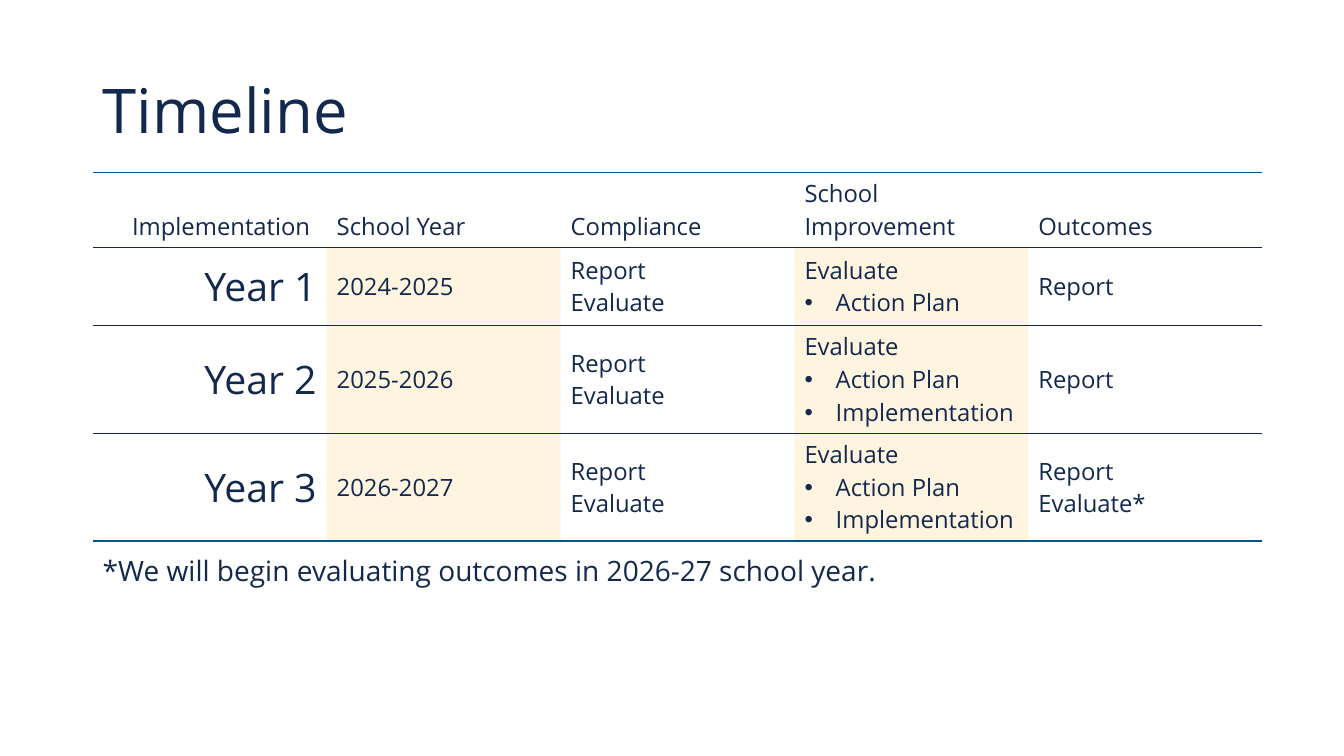
from dataclasses import dataclass

from lxml.etree import SubElement
from pptx import Presentation
from pptx.dml.color import RGBColor
from pptx.enum.text import MSO_ANCHOR as Anchor, MSO_AUTO_SIZE as Fit, PP_ALIGN as Align
from pptx.oxml.ns import qn
from pptx.util import Inches, Pt

COLORS = {"ink": "12284C", "edge": "005587", "gold": "FFC866"}
FONT = "Open Sans"
LEFT, COL, LINE, PAD = 0.92, 2.32, 0.32, 0.1
PLAIN = "{2D5ABB26-0587-4C30-8999-92F81FD0307C}"
BULLET = "• "
HEADS = ("Implementation ", "School Year", "Compliance", "School Improvement", "Outcomes")
TINTED = (1, 3)


@dataclass
class Year:
    name: str
    span: str
    plan: tuple[str, ...]
    result: tuple[str, ...]
    lines: float

    def cells(self) -> list[tuple[str, ...]]:
        return [(self.name,), (self.span,), ("Report", "Evaluate"),
                ("Evaluate", *(BULLET + step for step in self.plan)), self.result]


YEARS = (
    Year("Year 1", "2024-2025", ("Action Plan",), ("Report",), 2.1),
    Year("Year 2", "2025-2026", ("Action Plan", "Implementation"), ("Report",), 3),
    Year("Year 3", "2026-2027", ("Action Plan", "Implementation"), ("Report", "Evaluate*"), 3),
)


def grid(col: float, row: float, cols: float, rows: float) -> tuple:
    """Turn a place in columns and text lines into lengths."""
    return (Inches(LEFT + COL * col), Inches(LINE * row),
            Inches(COL * cols), Inches(LINE * rows))


def style(para, size: float, align=Align.LEFT) -> None:
    para.alignment = align
    para.font.name, para.font.size = FONT, Pt(size)
    para.font.color.rgb = RGBColor.from_string(COLORS["ink"])


def tint(parent, color: str):
    return SubElement(SubElement(parent, qn("a:solidFill")), qn("a:srgbClr"), val=COLORS[color])


def bullet(para) -> None:
    props = para._p.get_or_add_pPr()
    props.set("marL", str(Inches(0.31)))
    props.set("indent", str(-Inches(0.31)))
    SubElement(SubElement(props, qn("a:buClr")), qn("a:srgbClr"), val=COLORS["ink"])
    SubElement(props, qn("a:buFont"), typeface="Arial")
    SubElement(props, qn("a:buChar"), char=BULLET.strip())


def border(cell, side: str, color: str) -> None:
    line = SubElement(cell._tc.get_or_add_tcPr(), qn(f"a:{side}"), w=str(Pt(1)))
    tint(line, color)


def fill_cell(cell, texts: tuple[str, ...], size: float, align) -> None:
    frame = cell.text_frame
    for i, text in enumerate(texts):
        para = frame.add_paragraph() if i else frame.paragraphs[0]
        para.text = text.removeprefix(BULLET)
        if text.startswith(BULLET):
            bullet(para)
        style(para, size, align)


def add_plan(slide) -> None:
    rows = [[(head,) for head in HEADS], *(year.cells() for year in YEARS)]
    lines = [2, *(year.lines for year in YEARS)]
    place = grid(0, 5.34, len(HEADS), sum(lines))
    table = slide.shapes.add_table(len(rows), len(HEADS), *place).table
    table.first_row = table.horz_banding = False
    table._tbl.tblPr.find(qn("a:tableStyleId")).text = PLAIN
    for col in table.columns:
        col.width = Inches(COL)
    last = len(rows) - 1
    for r, texts in enumerate(rows):
        table.rows[r].height = Inches(LINE * lines[r] + PAD)
        for c, text in enumerate(texts):
            cell = table.cell(r, c)
            fill_cell(cell, text, 28 if r and not c else 17, Align.LEFT if c else Align.RIGHT)
            cell.vertical_anchor = Anchor.MIDDLE if r else Anchor.BOTTOM
            border(cell, "lnT", "ink" if r else "edge")
            border(cell, "lnB", "edge" if r == last else "ink")
            if r and c in TINTED:
                shade = tint(cell._tc.tcPr, "gold")
                SubElement(shade, qn("a:alpha"), val="20000")
            else:
                cell.fill.background()


def add_title(slide) -> None:
    title = slide.shapes.title
    title.left, title.top, title.width, title.height = grid(0, 1.25, 4.96, 4.53)
    title.text_frame.text = "Timeline"
    title.text_frame.vertical_anchor = Anchor.MIDDLE
    para = title.text_frame.paragraphs[0]
    para.line_spacing = 0.9
    style(para, 44)


def add_note(slide) -> None:
    frame = slide.shapes.add_textbox(*grid(0, 17, 4.52, 1.37)).text_frame
    frame.word_wrap = True
    frame.auto_size = Fit.SHAPE_TO_FIT_TEXT
    frame.text = "*We will begin evaluating outcomes in 2026-27 school year."
    style(frame.paragraphs[0], 20)


def main() -> None:
    deck = Presentation()
    deck.slide_width, deck.slide_height = Inches(13.33), Inches(7.5)
    slide = deck.slides.add_slide(deck.slide_layouts[5])
    add_title(slide)
    add_plan(slide)
    add_note(slide)
    deck.save("out.pptx")


if __name__ == "__main__":
    main()
